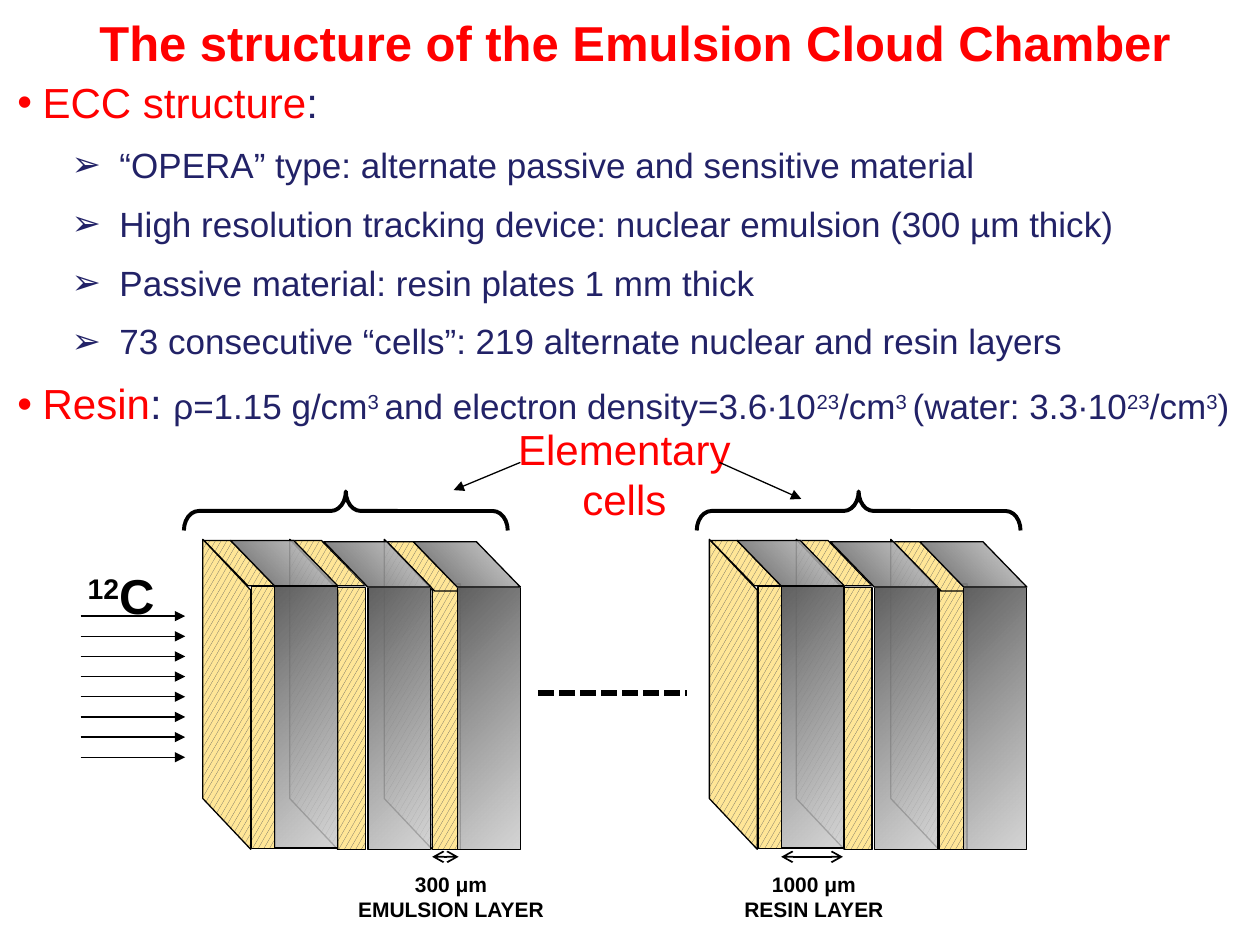
from lxml.etree import SubElement
from pptx import Presentation
from pptx.dml.color import RGBColor
from pptx.enum.dml import MSO_LINE, MSO_PATTERN
from pptx.enum.shapes import MSO_CONNECTOR, MSO_SHAPE as SHAPE
from pptx.enum.text import MSO_ANCHOR as ANCHOR, PP_ALIGN as ALIGN
from pptx.oxml.ns import qn
from pptx.util import Inches, Pt

RED = RGBColor(0xFF, 0x00, 0x00)
NAVY = RGBColor(0x22, 0x22, 0x67)
BLACK = RGBColor(0x00, 0x00, 0x00)
WHITE = RGBColor(0xFF, 0xFF, 0xFF)
CREAM = RGBColor(0xFF, 0xE6, 0x97)
SPECKLE = RGBColor(0x59, 0x59, 0x59)
DARK_GREY = RGBColor(0x60, 0x60, 0x60)
LIGHT_GREY = RGBColor(0xCC, 0xCC, 0xCC)

deck = Presentation()
deck.slide_width, deck.slide_height = Inches(10), Inches(7.5)
slide = deck.slides.add_slide(deck.slide_layouts[6])

# Grid of 100 columns by 75 rows
COL, ROW = deck.slide_width / 100, deck.slide_height / 75


def add_text(box, paragraphs, align=ALIGN.CENTER, wrap=True, anchor=ANCHOR.TOP):
    """Add a text box; a paragraph lists (text, size, colour, bold) runs, with ^ around superscripts."""
    left, top, width, height = box
    holder = slide.shapes.add_textbox(
        int(left * COL), int(top * ROW), int(width * COL), int(height * ROW))
    frame = holder.text_frame
    frame.word_wrap, frame.vertical_anchor = wrap, anchor
    for number, runs in enumerate(paragraphs):
        paragraph = frame.add_paragraph() if number else frame.paragraphs[0]
        paragraph.alignment = align
        for text, size, colour, bold in runs:
            for part, piece in enumerate(text.split("^")):
                if not piece:
                    continue
                run = paragraph.add_run()
                run.text = piece
                run.font.color.rgb = colour
                for name, value in {"name": "Arial", "size": Pt(size), "bold": bold}.items():
                    setattr(run.font, name, value)
                if part % 2:
                    run.font._element.set("baseline", "30000")
    return holder


def add_line(start, end, weight=0.75, head=None, tail=None):
    line = slide.shapes.add_connector(
        MSO_CONNECTOR.STRAIGHT, int(start[0] * COL), int(start[1] * ROW),
        int(end[0] * COL), int(end[1] * ROW))
    line.line.color.rgb, line.line.width = BLACK, Pt(weight)
    for tag, kind in (("a:headEnd", head), ("a:tailEnd", tail)):
        if kind:
            SubElement(line.line._get_or_add_ln(), qn(tag), type=kind)
    SubElement(line.element.spPr, qn("a:effectLst"))
    return line


# Heading and bullets
add_text((0.4, 0, 100, 6.7),
         [[("The structure of the Emulsion Cloud Chamber", 28, RED, True)]],
         anchor=ANCHOR.MIDDLE)

details = [
    "“OPERA” type: alternate passive and sensitive material",
    "High resolution tracking device: nuclear emulsion (300 µm thick)",
    "Passive material: resin plates 1 mm thick",
    "73 consecutive “cells”: 219 alternate nuclear and resin layers",
]
density = "ρ=1.15 g/cm^3 ^and electron density=3.6∙10^23^/cm^3 ^(water: 3.3∙10^23^/cm^3^)"
structure = [[("ECC structure", 24, RED, False), (": ", 24, NAVY, False)]]
structure += [[(detail, 20, NAVY, False)] for detail in details]
structure += [[("Resin", 24, RED, False), (": ", 24, NAVY, False), (density, 20, NAVY, False)]]
bullets = add_text((0.4, 6, 100, 28.3), structure, align=ALIGN.JUSTIFY)
for number, paragraph in enumerate(bullets.text_frame.paragraphs):
    detail = 0 < number <= len(details)
    paragraph.line_spacing = 0.9
    paragraph.space_before = paragraph.space_after = Pt(6)
    margin, indent, mark = (0.81, -0.38, "➢") if detail else (0.2, -0.2, "•")
    properties = paragraph._p.get_or_add_pPr()
    properties.set("marL", str(Inches(margin)))
    properties.set("indent", str(Inches(indent)))
    if detail:
        paragraph.level = 1
    SubElement(properties, qn("a:buFont"), typeface="Arial")
    SubElement(properties, qn("a:buChar"), char=mark)

# Carbon beam
add_text((5.7, 44.4, 7.8, 5.7), [[("^12^C", 28, BLACK, True)]], wrap=False)
for ray in range(8):
    height = 48.9 + 1.6 * ray
    add_line((6.4, height), (14.7, height), tail="triangle")

# Layer captions and thickness arrows
for box, thickness, layer in (
        ((24, 68.7, 23.6, 5), "300 μm", "EMULSION LAYER"),
        ((55.5, 68.7, 18.2, 5), "1000 μm", "RESIN LAYER")):
    caption = add_text(box, [[(text, 12, BLACK, True)] for text in (thickness, layer)])
    caption.fill.solid()
    caption.fill.fore_color.rgb = WHITE
    tint = next(caption.element.spPr.iter(qn("a:srgbClr")))
    SubElement(tint, qn("a:alpha"), val="52000")
for right, left in ((36.4, 34.3), (66.9, 62)):
    add_line((right, 68), (left, 68), 1, head="arrow", tail="arrow")
add_line((42.7, 55), (54.5, 55), 3).line.dash_style = MSO_LINE.SQUARE_DOT

# Braces over the two cells
for left in (25.9, 66.6):
    brace = slide.shapes.add_shape(
        SHAPE.LEFT_BRACE, int(left * COL), int(27.7 * ROW), int(3.1 * COL), int(25.7 * ROW))
    brace.adjustments[0], brace.adjustments[1] = 0.38, 0.5
    brace.rotation = 90
    brace.element.spPr.xfrm.set("flipV", "1")
    brace.fill.background()
    brace.line.color.rgb, brace.line.width = BLACK, Pt(2.25)
    brace.shadow.inherit = False
add_text((40, 33.1, 19.1, 9.1),
         [[(word, 24, RED, False)] for word in ("Elementary", "cells")], wrap=False)
add_line((41.3, 36.7), (36, 38.9), tail="triangle")
add_line((57.1, 36.7), (63.6, 39.6), tail="triangle")

# Layers of one cell, back to front: face, left, top, width, height, material
layers = [
    ("edge", 10.5, 56, 20.8, 1.9, CREAM),
    ("side", 5.7, 53.2, 24.6, 3.8, CREAM),
    ("top", 16.2, 42.9, 5.6, 3.6, CREAM),
    ("edge", 17.5, 55.9, 20.8, 2.2, CREAM),
    ("side", 12.6, 53.2, 24.6, 3.8, WHITE),
    ("top", 23.1, 42.9, 5.9, 3.6, CREAM),
    ("front", 21.8, 46.5, 5, 20.8, "resin"),
    ("top", 18.3, 42.9, 8.5, 3.6, "resin"),
    ("edge", 24.9, 55.8, 21.1, 2.2, CREAM),
    ("side", 20.1, 53.2, 24.6, 3.8, WHITE),
    ("top", 30.7, 43, 5.9, 3.9, CREAM),
    ("front", 29.2, 46.6, 5, 20.8, "resin"),
    ("top", 25.7, 43, 8.5, 3.6, "resin"),
    ("front", 36.3, 46.6, 5, 20.8, "resin"),
    ("top", 32.8, 43, 8.5, 3.6, "resin"),
]
slants = {"side": 1.06, "top": 0.97}
for shift in (0, 40.2):
    cell = slide.shapes.add_group_shape()
    for face, left, top, width, height, material in layers:
        layer = cell.shapes.add_shape(
            SHAPE.PARALLELOGRAM if face in slants else SHAPE.RECTANGLE,
            int((left + shift) * COL), int(top * ROW), int(width * COL), int(height * ROW))
        layer.shadow.inherit = False
        if face in slants:
            layer.adjustments[0] = slants[face]
        if face in ("edge", "side"):
            layer.rotation = 270
        if face == "top":
            layer.element.spPr.xfrm.set("flipV", "1")
        fill = layer.fill
        if material == "resin":
            fill.gradient()
            fill.gradient_angle = 315
            for stop, colour, place in zip(fill.gradient_stops, (DARK_GREY, LIGHT_GREY), (0, 1)):
                stop.color.rgb, stop.position = colour, place
            light = list(layer.element.spPr.iter(qn("a:srgbClr")))[-1]
            SubElement(light, qn("a:alpha"), val="82000")
        else:
            fill.patterned()
            fill.pattern = MSO_PATTERN.LARGE_CONFETTI
            fill.fore_color.rgb, fill.back_color.rgb = SPECKLE, material
        layer.line.color.rgb, layer.line.width = BLACK, Pt(0.75)

deck.save("out.pptx")
